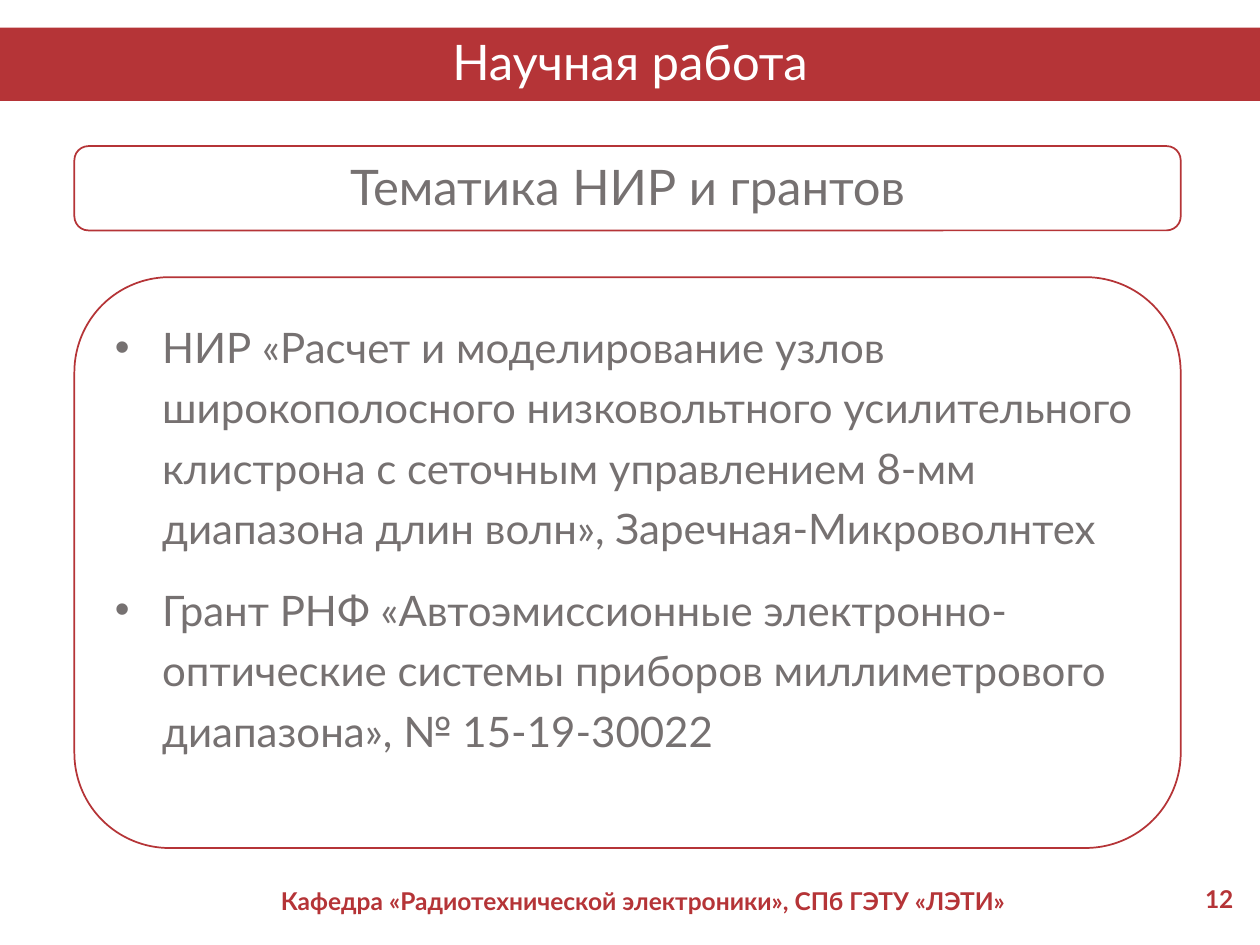
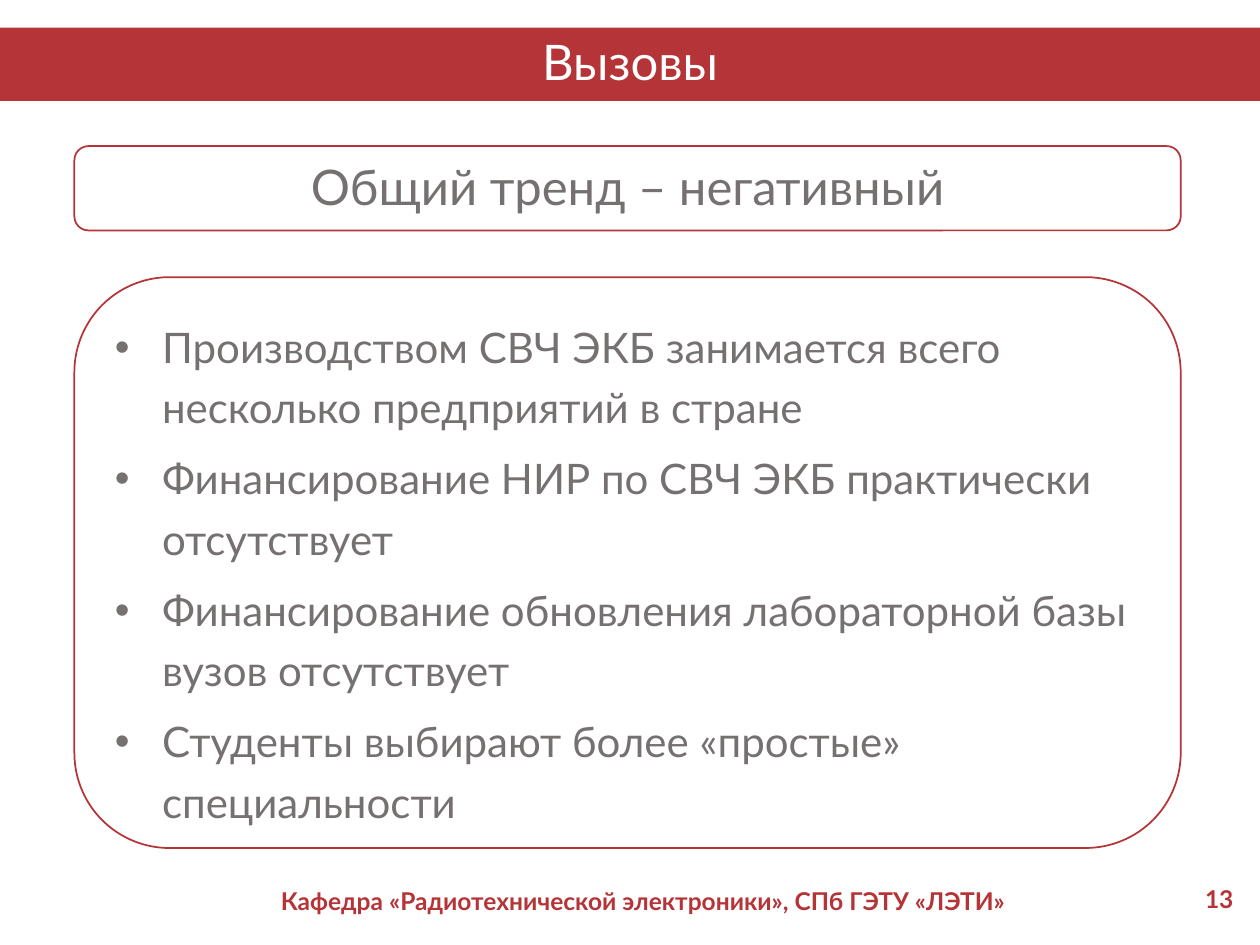
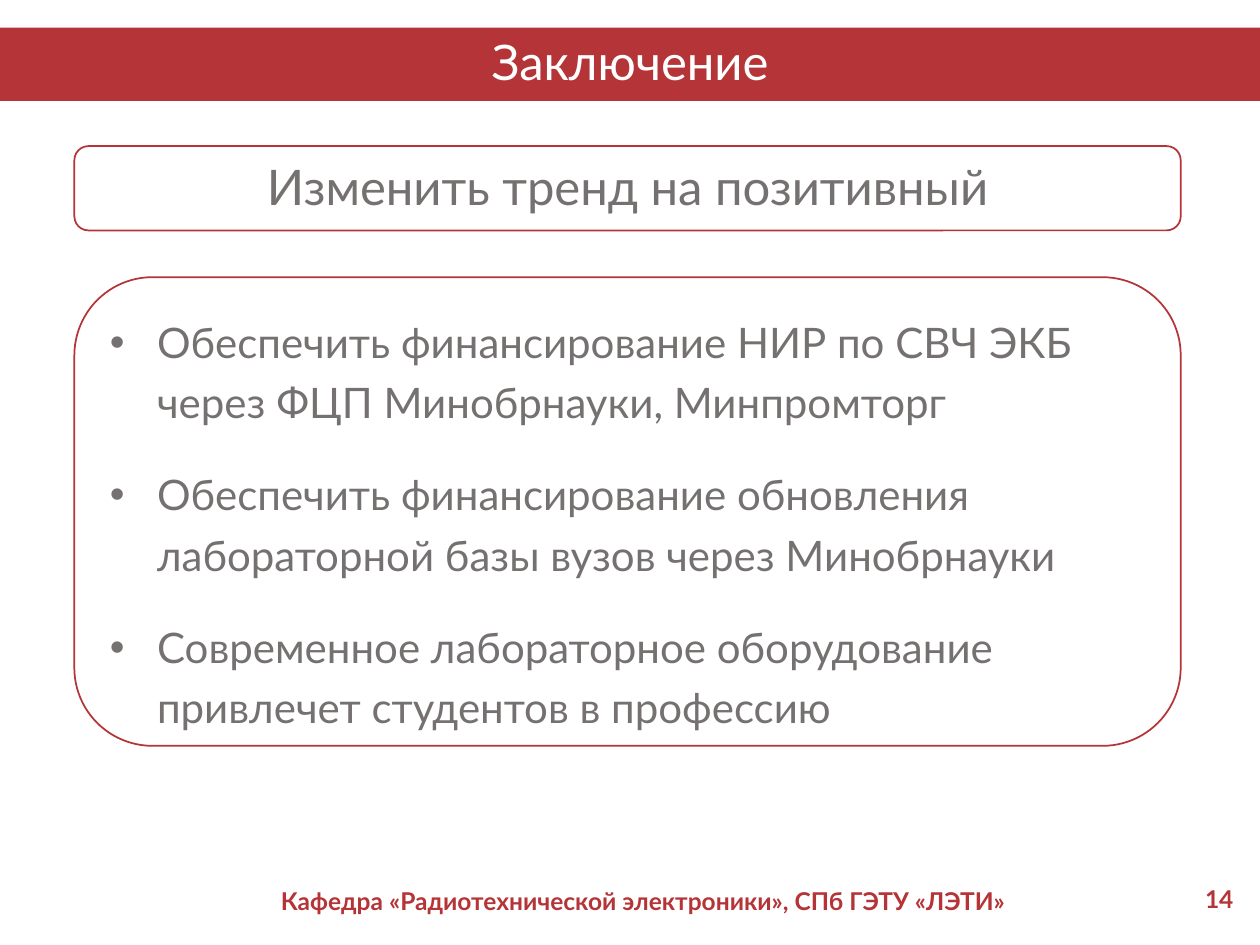
from dataclasses import dataclass
from math import sqrt

from pptx import Presentation
from pptx.dml.color import RGBColor
from pptx.enum.shapes import MSO_SHAPE
from pptx.enum.text import MSO_ANCHOR, MSO_AUTO_SIZE, PP_ALIGN
from pptx.util import Pt

# Content
FIRST_NUMBER = 12
FOOTER = "Кафедра «Радиотехнической электроники», СПб ГЭТУ «ЛЭТИ»"
SLIDES = [
    {
        "title": "Научная работа",
        "subtitle": "Тематика НИР и грантов",
        "panel_height": 326.2,
        "gap": 12,
        "items": [
            "НИР «Расчет и моделирование узлов широкополосного низковольтного "
            "усилительного клистрона с сеточным управлением 8-мм диапазона длин волн», "
            "Заречная-Микроволнтех",
            "Грант РНФ «Автоэмиссионные электронно-оптические системы приборов "
            "миллиметрового диапазона», № 15-19-30022",
        ],
    },
    {
        "title": "Вызовы",
        "subtitle": "Общий тренд – негативный",
        "panel_height": 326.2,
        "gap": 6,
        "items": [
            "Производством СВЧ ЭКБ занимается всего несколько предприятий в стране",
            "Финансирование НИР по СВЧ ЭКБ практически отсутствует",
            "Финансирование обновления лабораторной базы вузов отсутствует",
            "Студенты выбирают более «простые» специальности",
        ],
    },
    {
        "title": "Заключение",
        "subtitle": "Изменить тренд на позитивный",
        "panel_height": 267.8,
        "gap": 18,
        "items": [
            "Обеспечить финансирование НИР по СВЧ ЭКБ через ФЦП Минобрнауки, Минпромторг",
            "Обеспечить финансирование обновления лабораторной базы вузов через Минобрнауки",
            "Современное лабораторное оборудование привлечет студентов в профессию",
        ],
    },
]


# Theme
@dataclass(frozen=True)
class Theme:
    font: str = "Lato"
    red: RGBColor = RGBColor(0xB5, 0x34, 0x37)
    grey: RGBColor = RGBColor(0x76, 0x71, 0x71)
    white: RGBColor = RGBColor(0xFF, 0xFF, 0xFF)
    heading_size: int = 28
    list_size: int = 24
    footer_size: int = 14


THEME = Theme()

# Places in points: left, top, width, height
SLIDE_WIDTH, SLIDE_HEIGHT = 720, 540
TITLE_BAND = (0, 15.8, SLIDE_WIDTH, 41.8)
PANEL_LEFT, PANEL_WIDTH = 42.5, 632.2
SUBTITLE_BOX = (PANEL_LEFT, 83.5, PANEL_WIDTH, 48.2)
PANEL_TOP = 158.4
FOOTER_BOX = (79.9, 500.4, 575.3, 28.8)
NUMBER_BOX = (653, 499, 59, 28.8)
SIDE_MARGIN, TOP_MARGIN = 7.2, 3.6


def place(shape, box):
    for name, value in zip(("left", "top", "width", "height"), box):
        setattr(shape, name, Pt(value))


def write(shape, lines, size, color, bold=False, anchor=MSO_ANCHOR.TOP, **paragraph_format):
    frame = shape.text_frame
    frame.text = "\n".join(lines)
    frame_format = {
        "word_wrap": True,
        "auto_size": MSO_AUTO_SIZE.NONE,
        "vertical_anchor": anchor,
    }
    for name, value in frame_format.items():
        setattr(frame, name, value)
    font_format = {"name": THEME.font, "size": Pt(size), "bold": bold}
    for paragraph in frame.paragraphs:
        for name, value in paragraph_format.items():
            setattr(paragraph, name, value)
        for run in paragraph.runs:
            for name, value in font_format.items():
                setattr(run.font, name, value)
            run.font.color.rgb = color


def add_panel(slide, box):
    panel = slide.shapes.add_shape(MSO_SHAPE.ROUNDED_RECTANGLE, *map(Pt, box))
    panel.shadow.inherit = False
    panel.fill.solid()
    panel.fill.fore_color.rgb = THEME.white
    panel.line.color.rgb = THEME.red
    panel.line.width = Pt(1)
    return panel


def add_title(slide, text):
    title = slide.shapes.title
    place(title, TITLE_BAND)
    title.fill.solid()
    title.fill.fore_color.rgb = THEME.red
    write(title, [text], THEME.heading_size, THEME.white, anchor=MSO_ANCHOR.MIDDLE,
          alignment=PP_ALIGN.CENTER, line_spacing=0.9)


def add_list(slide, items, height, gap):
    panel = add_panel(slide, (PANEL_LEFT, PANEL_TOP, PANEL_WIDTH, height))
    body = slide.placeholders[1]
    body.element.addprevious(panel.element)
    # Keep the list clear of the rounded corners
    corner = panel.adjustments[0] * height * (1 - sqrt(0.5))
    place(body, (PANEL_LEFT + corner, PANEL_TOP + corner,
                 PANEL_WIDTH - 2 * corner, height - corner))
    frame = body.text_frame
    frame.margin_left = frame.margin_right = Pt(SIDE_MARGIN)
    frame.margin_top = frame.margin_bottom = Pt(TOP_MARGIN)
    write(body, items, THEME.list_size, THEME.grey, alignment=PP_ALIGN.LEFT,
          line_spacing=1.2, space_before=Pt(0), space_after=Pt(gap))


def add_footer(slide, number):
    for box, text, alignment in (
        (FOOTER_BOX, FOOTER, PP_ALIGN.CENTER),
        (NUMBER_BOX, str(number), PP_ALIGN.RIGHT),
    ):
        write(slide.shapes.add_textbox(*map(Pt, box)), [text], THEME.footer_size, THEME.red,
              bold=True, anchor=MSO_ANCHOR.MIDDLE, alignment=alignment)


# Build
def main():
    presentation = Presentation()
    presentation.slide_width = Pt(SLIDE_WIDTH)
    presentation.slide_height = Pt(SLIDE_HEIGHT)
    layout = presentation.slide_layouts.get_by_name("Title and Content")
    for number, content in enumerate(SLIDES, FIRST_NUMBER):
        slide = presentation.slides.add_slide(layout)
        add_title(slide, content["title"])
        add_list(slide, content["items"], content["panel_height"], content["gap"])
        add_footer(slide, number)
        write(add_panel(slide, SUBTITLE_BOX), [content["subtitle"]], THEME.heading_size,
              THEME.grey, alignment=PP_ALIGN.CENTER)
    presentation.save("out.pptx")


if __name__ == "__main__":
    main()
